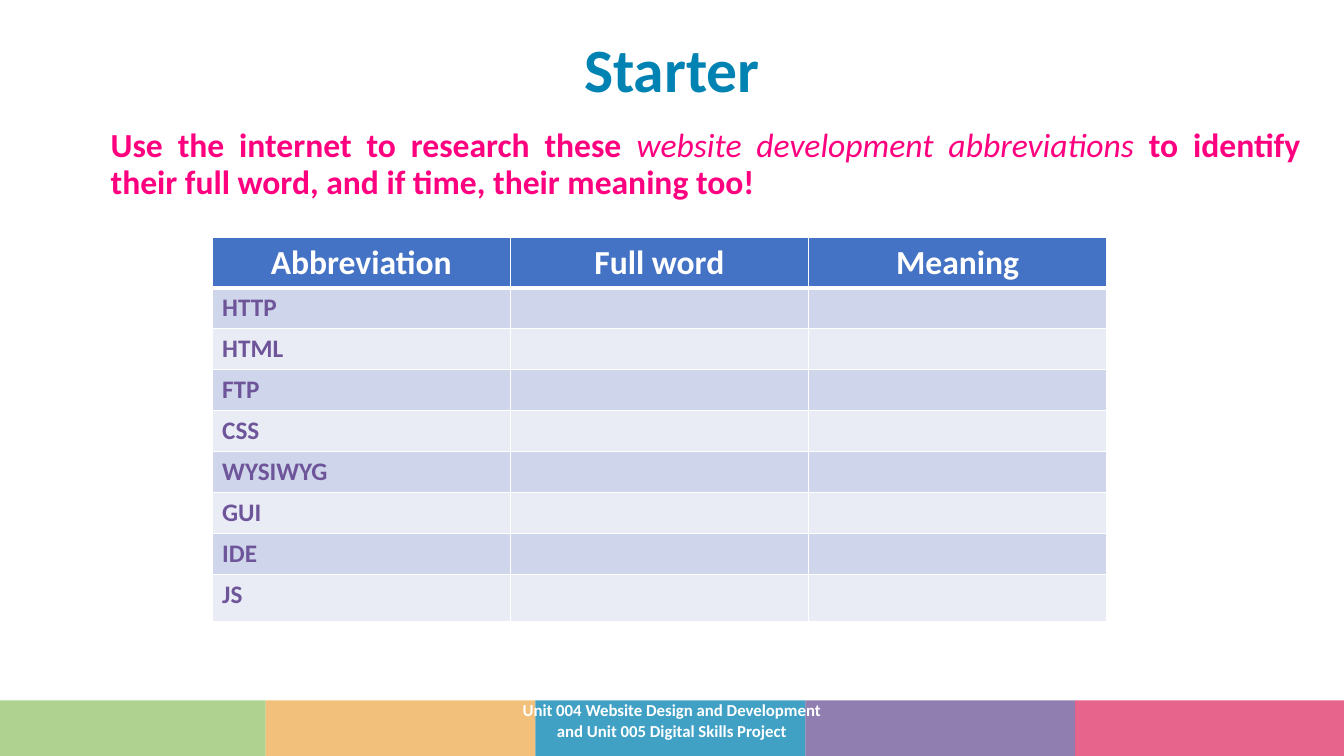
from dataclasses import dataclass

from lxml import etree
from pptx import Presentation
from pptx.dml.color import RGBColor
from pptx.enum.shapes import MSO_SHAPE
from pptx.enum.text import MSO_ANCHOR, PP_ALIGN
from pptx.oxml.ns import qn
from pptx.slide import Slide
from pptx.table import _Cell
from pptx.text.text import _Paragraph
from pptx.util import Emu, Pt

RECT = MSO_SHAPE.RECTANGLE
TOP, MIDDLE = MSO_ANCHOR.TOP, MSO_ANCHOR.MIDDLE
LEFT, CENTER, JUSTIFY = PP_ALIGN.LEFT, PP_ALIGN.CENTER, PP_ALIGN.JUSTIFY
SCALE = 9525
FACE = "Calibri"
WHITE = "FFFFFF"
BANDS = ("96C36C", "F0AB4F", "0082B2", "6B5397", "DF3266")
HEADS = ("Abbreviation", "Full word", "Meaning")
TERMS = ("HTTP", "HTML", "FTP", "CSS", "WYSIWYG", "GUI", "IDE", "JS")
STRIPES = ("E9EBF5", "CFD5EA")


@dataclass
class Run:
    text: str
    bold: bool = True
    slant: bool = False


@dataclass
class Box:
    left: int
    top: int
    width: int
    height: int
    size: int
    color: str
    align: PP_ALIGN
    anchor: MSO_ANCHOR
    pitch: float
    lines: list[list[Run]]


BOXES = (
    Box(88, 0, 1104, 139, 44, "0082B2", CENTER, MIDDLE, 0.9, [[Run("Starter")]]),
    Box(96, 118, 1152, 522, 24, "FE007F", JUSTIFY, TOP, 0.9, [[
        Run("Use the internet to research these "),
        Run("website development abbreviations", False, True),
        Run(" to identify their full word, and if time, their meaning too!"),
    ]]),
    Box(424, 667, 432, 38, 12, WHITE, CENTER, MIDDLE, 1.0, [
        [Run("Unit 004 Website Design and Development")],
        [Run("and Unit 005 Digital Skills Project")],
    ]),
)


def px(count: int) -> Emu:
    return Emu(count * SCALE)


def rgb(code: str) -> RGBColor:
    return RGBColor.from_string(code)


def style(para: _Paragraph, size: int, color: str, align: PP_ALIGN) -> None:
    para.alignment = align
    para.font.name = FACE
    para.font.size = Pt(size)
    para.font.color.rgb = rgb(color)


def draw_band(slide: Slide, index: int, color: str) -> None:
    width = 257
    band = slide.shapes.add_shape(
        RECT, px(index * width - 4), px(667), px(width), px(54))
    band.shadow.inherit = False
    band.line.fill.background()
    band.fill.solid()
    band.fill.fore_color.rgb = rgb(color)
    tint = band.fill._xPr.find(qn("a:solidFill"))[0]
    etree.SubElement(tint, qn("a:alpha"), val="75000")


def draw_box(slide: Slide, box: Box) -> None:
    shape = slide.shapes.add_textbox(
        px(box.left), px(box.top), px(box.width), px(box.height))
    frame = shape.text_frame
    frame.word_wrap = True
    frame.vertical_anchor = box.anchor
    for index, line in enumerate(box.lines):
        para = frame.add_paragraph() if index else frame.paragraphs[0]
        style(para, box.size, box.color, box.align)
        para.line_spacing = box.pitch
        alike = len(line) == 1
        if alike:
            para.font.bold = line[0].bold
        for part in line:
            run = para.add_run()
            run.text = part.text
            if not alike:
                run.font.bold = part.bold
                run.font.italic = part.slant


def add_edge(cell: _Cell, side: str, points: int) -> None:
    props = cell._tc.get_or_add_tcPr()
    edge = etree.SubElement(props, qn(f"a:ln{side}"), w=str(Pt(points)))
    fill = etree.SubElement(edge, qn("a:solidFill"))
    etree.SubElement(fill, qn("a:srgbClr"), val=WHITE)


def draw_cell(cell: _Cell, row: int, text: str) -> None:
    head = row == 0
    cell.text = text
    para = cell.text_frame.paragraphs[0]
    style(para, 24 if head else 18, WHITE if head else "6E559A",
          CENTER if head else LEFT)
    para.font.bold = True
    for side in "LRTB":
        thick = (row, side) in ((0, "B"), (1, "T"))
        add_edge(cell, side, 3 if thick else 1)
    cell.fill.solid()
    cell.fill.fore_color.rgb = rgb("4472C4" if head else STRIPES[row % 2])


def draw_table(slide: Slide) -> None:
    rows = [HEADS] + [(term, "", "") for term in TERMS]
    highs = [47] + [39] * (len(TERMS) - 1) + [45]
    wide = 284
    table = slide.shapes.add_table(
        len(rows), len(HEADS), px(202), px(226),
        px(wide * len(HEADS)), px(sum(highs))).table
    for column in table.columns:
        column.width = px(wide)
    for index, (texts, high) in enumerate(zip(rows, highs)):
        table.rows[index].height = px(high)
        for place, text in enumerate(texts):
            draw_cell(table.cell(index, place), index, text)


def main() -> None:
    deck = Presentation()
    deck.slide_width, deck.slide_height = px(1280), px(720)
    slide = deck.slides.add_slide(deck.slide_layouts[6])
    for index, color in enumerate(BANDS):
        draw_band(slide, index, color)
    title, task, footer = BOXES
    draw_box(slide, title)
    draw_box(slide, task)
    draw_table(slide)
    draw_box(slide, footer)
    deck.save("out.pptx")


if __name__ == "__main__":
    main()
